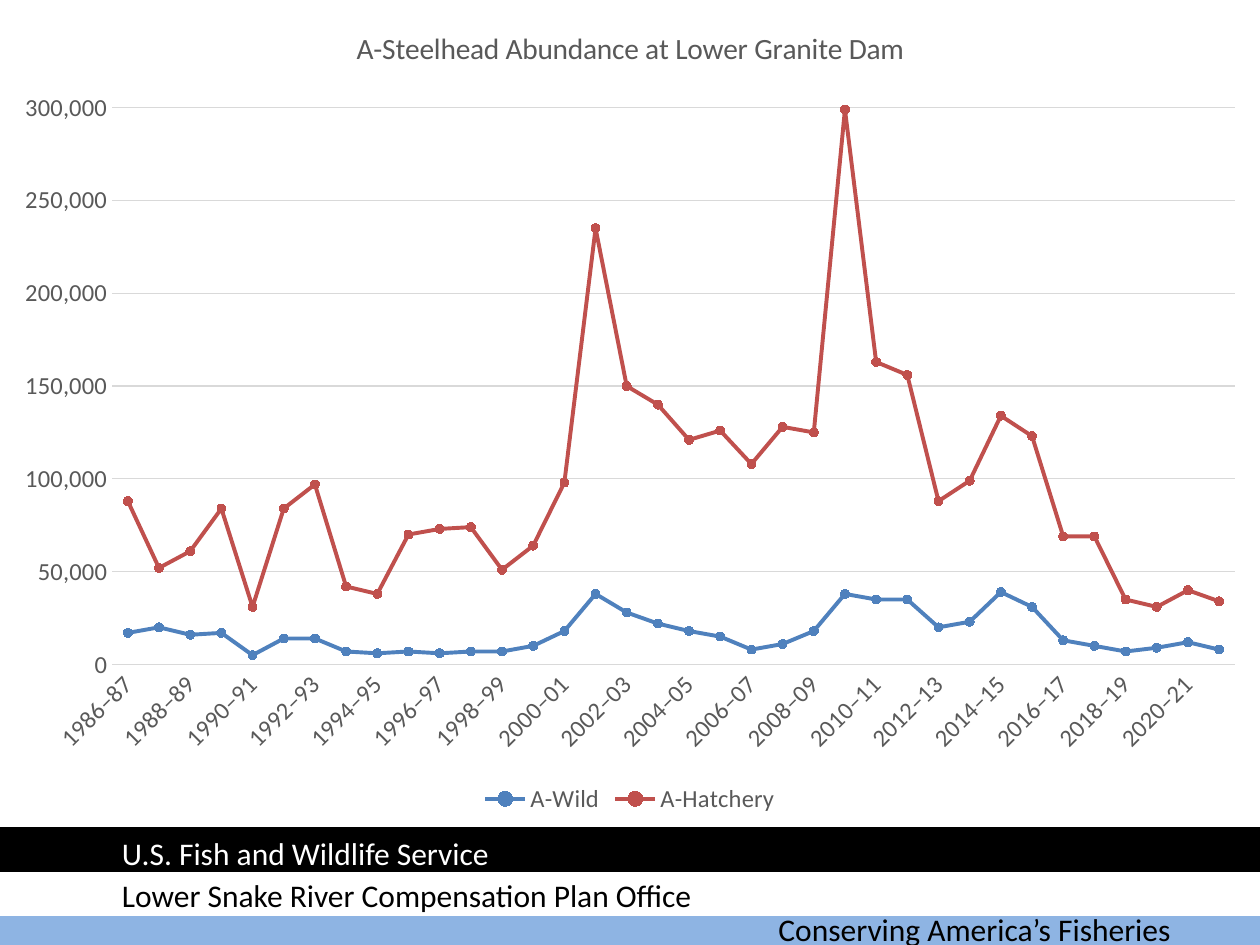
from lxml import etree
from pptx import Presentation
from pptx.chart.data import CategoryChartData
from pptx.dml.color import RGBColor
from pptx.enum.chart import XL_CHART_TYPE, XL_LEGEND_POSITION, XL_MARKER_STYLE, XL_TICK_MARK
from pptx.enum.shapes import MSO_SHAPE
from pptx.enum.text import MSO_AUTO_SIZE
from pptx.oxml import parse_xml
from pptx.oxml.ns import nsdecls, qn
from pptx.util import Inches, Pt

RECTANGLE = MSO_SHAPE.RECTANGLE
GROW = MSO_AUTO_SIZE.SHAPE_TO_FIT_TEXT
STACKED_LINE = XL_CHART_TYPE.LINE_MARKERS_STACKED
BOTTOM = XL_LEGEND_POSITION.BOTTOM
CIRCLE = XL_MARKER_STYLE.CIRCLE
NO_TICK = XL_TICK_MARK.NONE

FONT = "Calibri"
BLACK, WHITE, BAND_BLUE = "000000", "FFFFFF", "8EB4E3"
CHART_TEXT, GRID = "595959", "D9D9D9"

BANDS = [(-0.01, 7.17, BAND_BLUE), (0, 6.93, WHITE), (0, 6.58, BLACK)]
LABELS = [
    ("Conserving America’s Fisheries", 6.08, 7.17, 3.67, BLACK),
    ("U.S. Fish and Wildlife Service", 0.87, 6.57, 4.16, WHITE),
    ("Lower Snake River Compensation Plan Office", 0.87, 6.9, 4.97, BLACK),
]
TITLE = "A-Steelhead Abundance at Lower Granite Dam"
SEASONS = [f"{year}–{(year + 1) % 100:02d}" for year in range(1986, 2022)]
THOUSANDS = {
    "A-Wild": ("4F81BD", [
        17, 20, 16, 17, 5, 14, 14, 7, 6, 7, 6, 7, 7, 10, 18, 38, 28, 22,
        18, 15, 8, 11, 18, 38, 35, 35, 20, 23, 39, 31, 13, 10, 7, 9, 12, 8]),
    "A-Hatchery": ("C0504D", [
        71, 32, 45, 67, 26, 70, 83, 35, 32, 63, 67, 67, 44, 54, 80, 197, 122, 118,
        103, 111, 100, 117, 107, 261, 128, 121, 68, 76, 95, 92, 56, 59, 28, 22, 28, 26]),
}


def rgb(value):
    return RGBColor.from_string(value)


class SlideBuilder:
    """Holds the text style and the current slide."""

    def __init__(self, page, font):
        self.page = page
        self.font = font

    def style(self, font, size, color):
        font.name = self.font
        font.size = Pt(size)
        font.bold = False
        font.color.rgb = rgb(color)

    def line(self, line, width, color):
        line.width = Pt(width)
        line.color.rgb = rgb(color)

    def band(self, left, top, color):
        band = self.page.shapes.add_shape(
            RECTANGLE, Inches(left), Inches(top), Inches(10), Inches(0.33))
        band.shadow.inherit = False
        band.fill.solid()
        band.fill.fore_color.rgb = rgb(color)
        self.line(band.line, 2, color)

    def label(self, text, left, top, width, color):
        box = self.page.shapes.add_textbox(
            Inches(left), Inches(top), Inches(width), Inches(0.4))
        box.text_frame.word_wrap = True
        box.text_frame.auto_size = GROW
        span = box.text_frame.paragraphs[0].add_run()
        span.text = text
        self.style(span.font, 18, color)

    def axis(self, axis):
        axis.major_tick_mark = NO_TICK
        axis.minor_tick_mark = NO_TICK
        self.style(axis.tick_labels.font, 14, CHART_TEXT)

    def line_chart(self, title, categories, groups):
        data = CategoryChartData(number_format="#,##0")
        data.categories = categories
        for name, (_, values) in groups.items():
            data.add_series(name, [value * 1000 for value in values])
        chart = self.page.shapes.add_chart(
            STACKED_LINE, Inches(0), Inches(0), Inches(10), Inches(6.5), data).chart
        self.style(chart.font, 14, BLACK)
        background = parse_xml(f"<c:spPr {nsdecls('c', 'a')}/>")
        fill = etree.SubElement(background, qn("a:solidFill"))
        etree.SubElement(fill, qn("a:srgbClr"), val=WHITE)
        etree.SubElement(etree.SubElement(background, qn("a:ln")), qn("a:noFill"))
        chart.element.find(qn("c:chart")).addnext(background)

        chart.has_title = True
        span = chart.chart_title.text_frame.paragraphs[0].add_run()
        span.text = title
        self.style(span.font, 16.8, CHART_TEXT)
        chart.chart_title.include_in_layout = False

        chart.has_legend = True
        chart.legend.position = BOTTOM
        chart.legend.include_in_layout = False
        self.style(chart.legend.font, 14, CHART_TEXT)

        seasons, counts = chart.category_axis, chart.value_axis
        self.axis(seasons)
        self.line(seasons.format.line, 0.75, GRID)
        season_axis = next(chart.element.iter(qn("c:catAx")))
        body = next(season_axis.iter(qn("a:bodyPr")))
        body.set("rot", "-2700000")
        body.set("vert", "horz")
        self.axis(counts)
        counts.format.line.fill.background()
        counts.minimum_scale = 0
        counts.maximum_scale = 300000
        counts.major_unit = 50000
        counts.tick_labels.number_format = "#,##0"
        counts.tick_labels.number_format_is_linked = False
        self.line(counts.major_gridlines.format.line, 0.75, GRID)

        chart.plots[0].vary_by_categories = False
        for series, (color, _) in zip(chart.plots[0].series, groups.values()):
            series.smooth = False
            self.line(series.format.line, 2.25, color)
            series.marker.style = CIRCLE
            series.marker.size = 5
            series.marker.format.fill.solid()
            series.marker.format.fill.fore_color.rgb = rgb(color)
            self.line(series.marker.format.line, 0.75, color)


def main():
    deck = Presentation()
    deck.slide_width = Inches(10)
    deck.slide_height = Inches(7.5)
    page = deck.slides.add_slide(deck.slide_layouts[6])
    builder = SlideBuilder(page, FONT)
    for band in BANDS:
        builder.band(*band)
    for label in LABELS:
        builder.label(*label)
    builder.line_chart(TITLE, SEASONS, THOUSANDS)
    deck.save("out.pptx")


if __name__ == "__main__":
    main()
